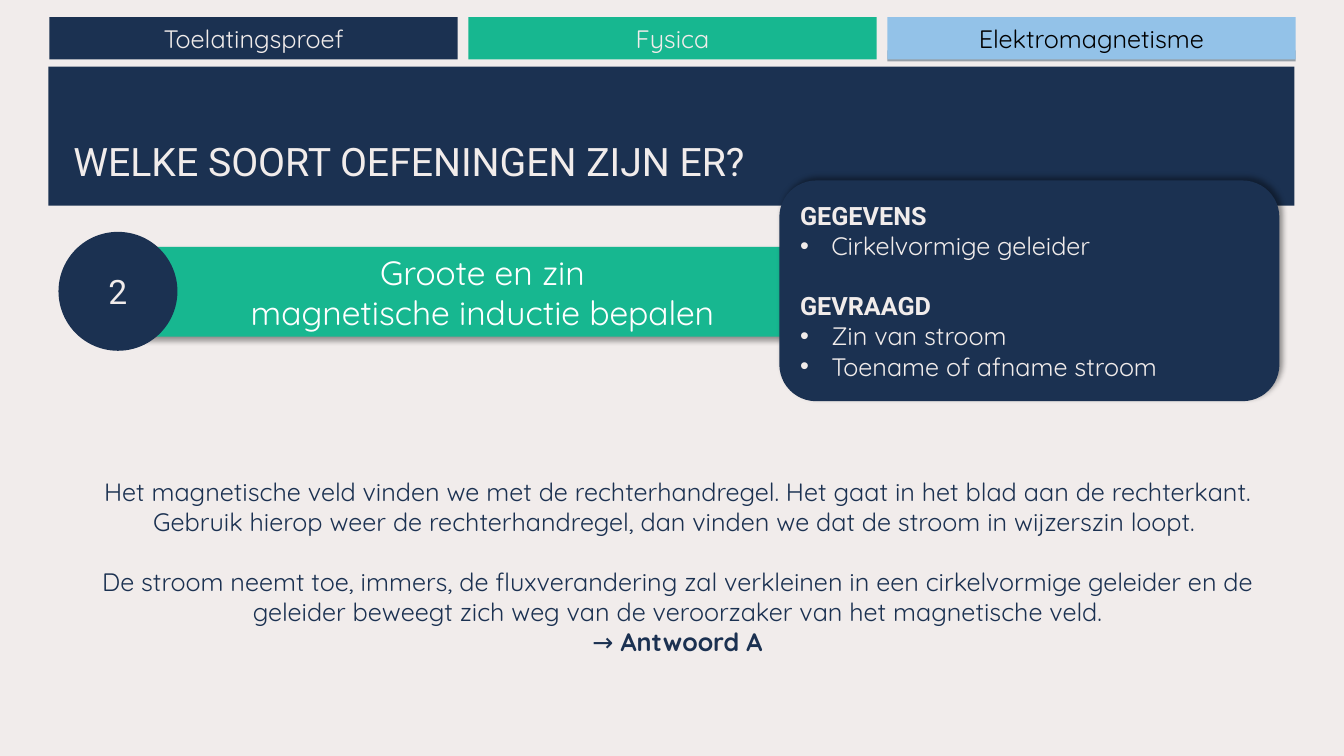
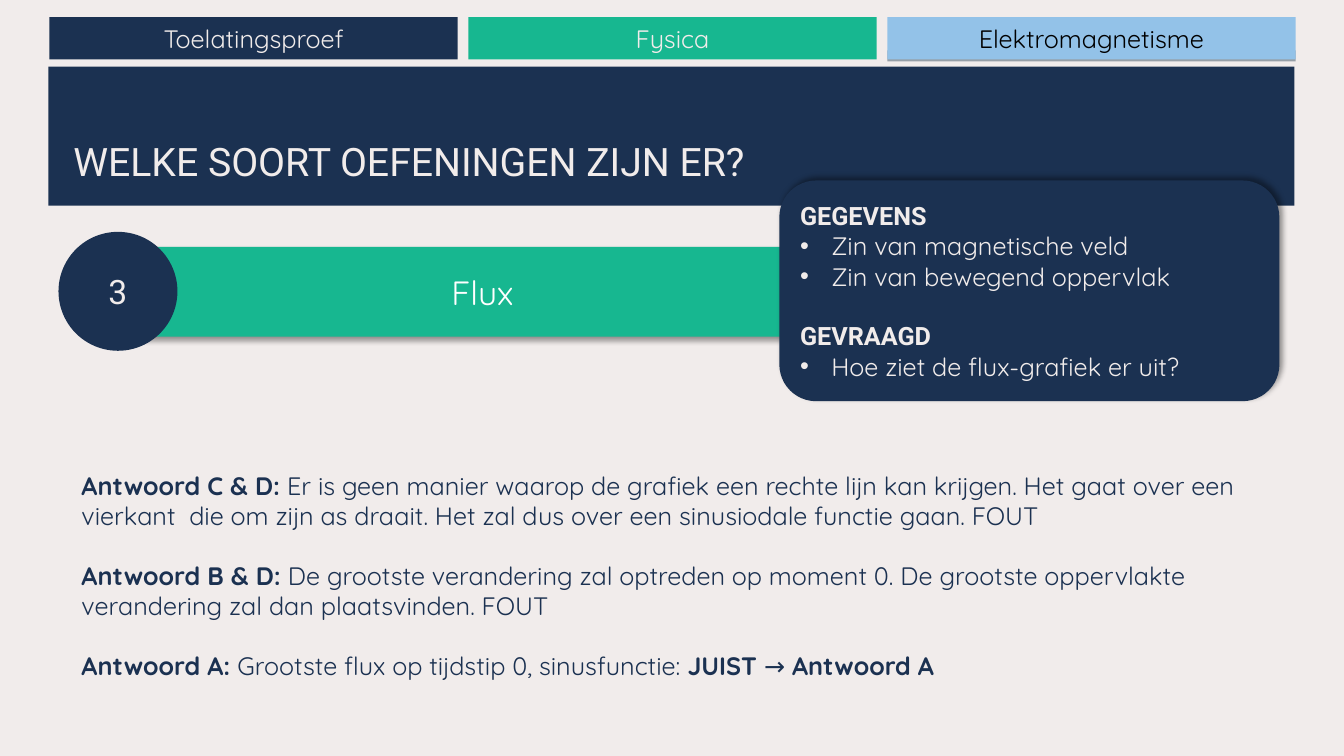
from lxml.etree import SubElement
from pptx import Presentation
from pptx.dml.color import RGBColor
from pptx.enum.shapes import MSO_SHAPE
from pptx.enum.text import MSO_ANCHOR, PP_ALIGN
from pptx.oxml.ns import qn
from pptx.util import Inches, Pt

NAVY, GREEN, BLUE, GREY = "1B3151", "17B790", "93C2E8", "969FA7"
PAPER, WHITE, BLACK = "F1ECEB", "FFFFFF", "000000"
BODY_FONT, HEAD_FONT = "Quicksand", "Roboto"
LINE_GAP = 21

TITLE = "WELKE SOORT OEFENINGEN ZIJN ER?"
TABS = [
    ("Toelatingsproef", NAVY, PAPER),
    ("Fysica", GREEN, PAPER),
    ("Elektromagnetisme", BLUE, BLACK),
]

# A body paragraph is (spans, space before); a span is (text, bold).
EXERCISES = [
    {
        "number": "2",
        "topic": "Groote en zin\vmagnetische inductie bepalen",
        "panel": [
            ("GEGEVENS", ["Cirkelvormige geleider"]),
            ("GEVRAAGD", ["Zin van stroom", "Toename of afname stroom"]),
        ],
        "body_top": 4.17,
        "body_align": PP_ALIGN.CENTER,
        "body": [
            ([("Het magnetische veld vinden we met de rechterhandregel. Het gaat in het "
               "blad aan de rechterkant. Gebruik hierop weer de rechterhandregel, dan "
               "vinden we dat de stroom in wijzerszin loopt. ", False)], 0),
            ([("De stroom neemt toe, immers, de fluxverandering zal verkleinen in een "
               "cirkelvormige geleider en de geleider beweegt zich weg van de "
               "veroorzaker van het magnetische veld.", False)], LINE_GAP),
            ([("→ ", False), ("Antwoord A", True)], 0),
        ],
    },
    {
        "number": "3",
        "topic": "Flux",
        "panel": [
            ("GEGEVENS", ["Zin van magnetische veld", "Zin van bewegend oppervlak"]),
            ("GEVRAAGD", ["Hoe ziet de flux-grafiek er uit?"]),
        ],
        "body_top": 4.26,
        "body_align": PP_ALIGN.LEFT,
        "body": [
            ([("Antwoord C & D: ", True),
              ("Er is geen manier waarop de grafiek een rechte lijn kan krijgen. Het gaat "
               "over een vierkant  die om zijn as draait. Het zal dus over een "
               "sinusiodale functie gaan. FOUT", False)], 0),
            ([("Antwoord B & D: ", True),
              ("De grootste verandering zal optreden op moment 0. De grootste oppervlakte "
               "verandering zal dan plaatsvinden. FOUT", False)], LINE_GAP),
            ([("Antwoord A: ", True),
              ("Grootste flux op tijdstip 0, sinusfunctie: ", False),
              ("JUIST ", True), ("→ ", False), ("Antwoord A", True)], LINE_GAP),
        ],
    },
]


def color(value):
    return RGBColor.from_string(value)


def add_bullet(para):
    properties = para._p.get_or_add_pPr()
    properties.set("marL", str(Inches(0.31)))
    properties.set("indent", str(Inches(-0.31)))
    SubElement(properties, qn("a:buFont")).set("typeface", "Arial")
    SubElement(properties, qn("a:buChar")).set("char", "•")


def write(box, text, size=18, font=BODY_FONT, ink=PAPER, bold=False,
          align=PP_ALIGN.CENTER, before=0, bullet=False):
    """Add a paragraph to the box; text is a string or a list of (text, bold) spans."""
    frame = box.text_frame
    para = frame.paragraphs[0] if not frame.text else frame.add_paragraph()
    para.alignment = align
    para.space_before = Pt(before)
    if bullet:
        add_bullet(para)
    spans = [(text, bold)] if isinstance(text, str) else text
    for number, (words, heavy) in enumerate(spans):
        for part, piece in enumerate(words.split("\v")):
            if part:
                para.add_line_break()
            span = para.add_run()
            span.text = piece
            span.font.size = Pt(size)
            span.font.name = font
            span.font.bold = heavy
            span.font.color.rgb = color(ink)


def add_shadow(shape, degrees):
    effects = shape._element.spPr.find(qn("a:effectLst"))
    shadow = SubElement(effects, qn("a:outerShdw"), blurRad=str(Pt(4)), dist=str(Pt(3)),
                        dir=str(degrees * 60000), algn="tl", rotWithShape="0")
    tint = SubElement(shadow, qn("a:srgbClr"), val=BLACK)
    SubElement(tint, qn("a:alpha"), val="40000")


def add_block(page, kind, left, top, width, height, fill, shadow=None):
    shape = page.shapes.add_shape(kind, Inches(left), Inches(top), Inches(width), Inches(height))
    shape.shadow.inherit = False
    shape.fill.solid()
    shape.fill.fore_color.rgb = color(fill)
    shape.line.fill.background()
    shape.text_frame.word_wrap = True
    shape.text_frame.vertical_anchor = MSO_ANCHOR.MIDDLE
    if shadow is not None:
        add_shadow(shape, shadow)
    return shape


def add_text_box(page, left, top, width, height, anchor):
    box = page.shapes.add_textbox(Inches(left), Inches(top), Inches(width), Inches(height))
    box.text_frame.word_wrap = True
    box.text_frame.vertical_anchor = anchor
    return box


def add_header(page):
    tab_width, tab_pitch = 4.05, 4.155
    add_block(page, MSO_SHAPE.RECTANGLE, 0.49 + 2 * tab_pitch, 0.5, tab_width, 0.11, GREY)
    for index, (label, fill, ink) in enumerate(TABS):
        tab = add_block(page, MSO_SHAPE.RECTANGLE, 0.49 + index * tab_pitch, 0.17,
                        tab_width, 0.42, fill)
        write(tab, label, ink=ink)
    add_block(page, MSO_SHAPE.RECTANGLE, 0.48, 0.66, 12.36, 1.38, NAVY)
    title = add_text_box(page, 0.63, 0.8, 12.06, 1.08, MSO_ANCHOR.BOTTOM)
    write(title, TITLE, size=28, font=HEAD_FONT, align=PP_ALIGN.LEFT)


def add_panel(page, sections):
    panel = add_block(page, MSO_SHAPE.ROUNDED_RECTANGLE, 7.73, 1.79, 4.96, 2.19, NAVY, shadow=315)
    for index, (heading, items) in enumerate(sections):
        write(panel, heading, font=HEAD_FONT, bold=True, align=PP_ALIGN.LEFT,
              before=LINE_GAP if index else 0)
        for item in items:
            write(panel, item, align=PP_ALIGN.LEFT, bullet=True)


def add_exercise(deck, exercise):
    page = deck.slides.add_slide(deck.slide_layouts[6])
    add_header(page)

    body = add_text_box(page, 0.71, exercise["body_top"], 12.02, 2.9, MSO_ANCHOR.MIDDLE)
    for spans, before in exercise["body"]:
        write(body, spans, ink=NAVY, align=exercise["body_align"], before=before)

    topic = add_block(page, MSO_SHAPE.ROUNDED_RECTANGLE, 1.16, 2.45, 7.25, 0.89, GREEN, shadow=45)
    write(topic, exercise["topic"], size=24, ink=WHITE)
    badge = add_block(page, MSO_SHAPE.OVAL, 0.58, 2.3, 1.18, 1.18, NAVY)
    write(badge, exercise["number"], size=24, font=HEAD_FONT)
    add_panel(page, exercise["panel"])


def main():
    deck = Presentation()
    deck.slide_width, deck.slide_height = Inches(13.33), Inches(7.5)
    background = deck.slide_master.background.fill
    background.solid()
    background.fore_color.rgb = color(PAPER)
    for exercise in EXERCISES:
        add_exercise(deck, exercise)
    deck.save("out.pptx")


if __name__ == "__main__":
    main()
